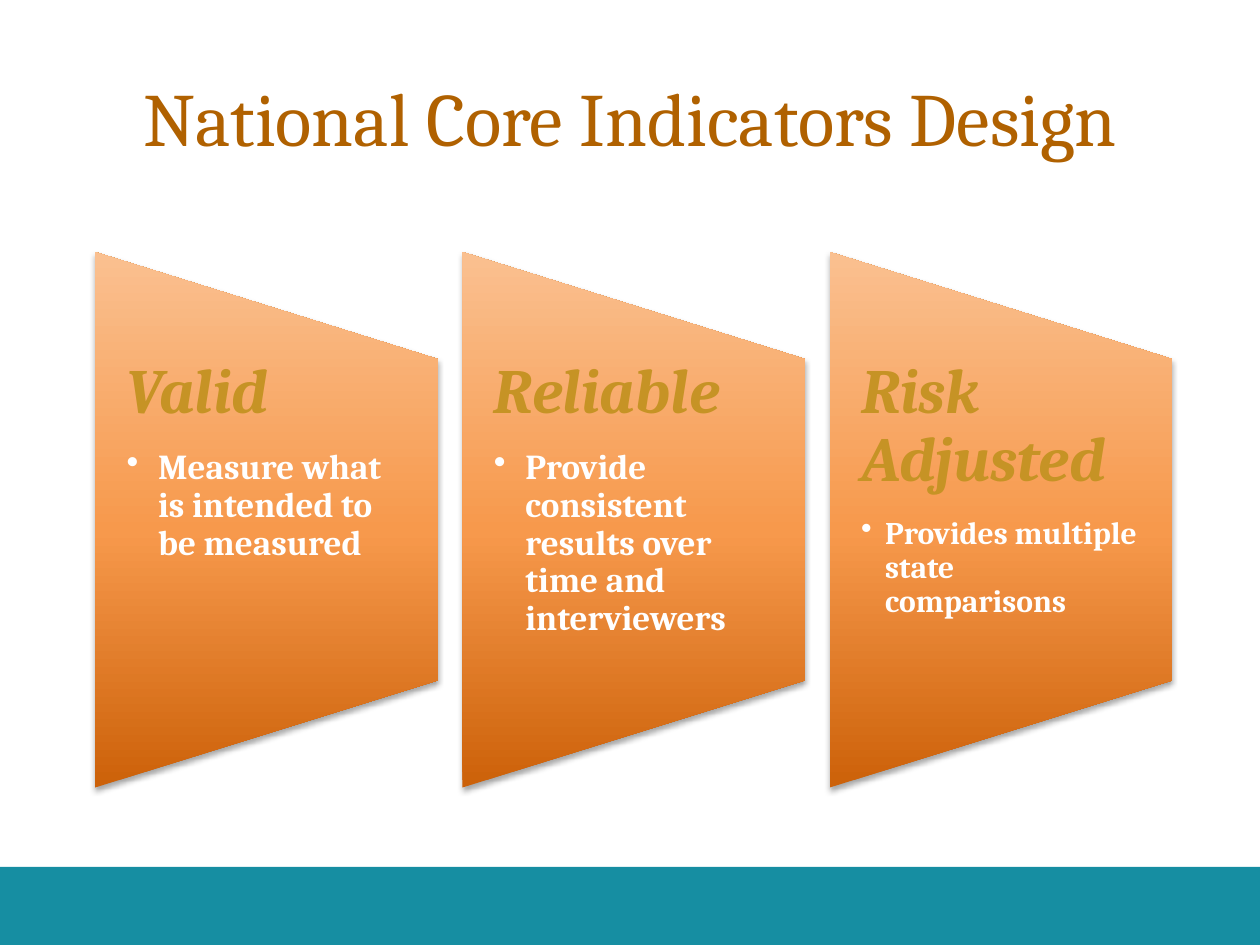
import pptx
import pptx.util
import pptx.dml.color
import pptx.enum.shapes
import pptx.enum.text
import pptx.oxml
import pptx.oxml.ns
from lxml import etree
from pptx.util import Inches, Pt

FONT = "Cambria"
COLORS = {
    "title": "B06100",
    "heading": "C69325",
    "detail": "FFFFFF",
    "footer": "168EA2",
    "panel_dark": "CC6109",
    "panel_mid": "F7994C",
    "panel_light": "FAC090",
    "shadow": "000000",
}
# Heading, detail, detail size in points, bullet indent in inches
PANELS = [
    ("Valid", "Measure what is intended to be measured", 20, 0.25),
    ("Reliable", "Provide consistent results over time and interviewers", 20, 0.25),
    ("Risk Adjusted", "Provides multiple state comparisons", 18, 0.19),
]
PANEL_LEFT, PANEL_TOP, PANEL_WIDTH, PANEL_HEIGHT = 0.755, 2, 2.72, 4.25
PANEL_PITCH = 2.915


def rgb(name):
    return pptx.dml.color.RGBColor.from_string(COLORS[name])


def format_font(font, size, color):
    font.name = FONT
    font.size = Pt(size)
    font.color.rgb = rgb(color)


def add_footer_band(slide, left, top, width, height):
    band = slide.shapes.add_shape(
        pptx.enum.shapes.MSO_SHAPE.RECTANGLE,
        Inches(left), Inches(top), Inches(width), Inches(height))
    band.shadow.inherit = False
    band.fill.solid()
    band.fill.fore_color.rgb = rgb("footer")
    band.line.fill.background()


def fill_title(title, left, top, width, height):
    title.left, title.top = Inches(left), Inches(top)
    title.width, title.height = Inches(width), Inches(height)
    title.text_frame.text = "National Core Indicators Design"
    title.text_frame.vertical_anchor = pptx.enum.text.MSO_ANCHOR.MIDDLE
    paragraph = title.text_frame.paragraphs[0]
    paragraph.alignment = pptx.enum.text.PP_ALIGN.CENTER
    format_font(paragraph.runs[0].font, 43, "title")


def style_panel(shape):
    """Give the shape an upright gradient and a soft shadow, unaffected by rotation."""
    namespace = pptx.oxml.ns.nsdecls("a")
    stops = "".join(
        f'<a:gs pos="{position * 1000}"><a:srgbClr val="{COLORS[name]}"/></a:gs>'
        for position, name in [(0, "panel_dark"), (48, "panel_mid"), (100, "panel_light")])
    gradient = pptx.oxml.parse_xml(
        f'<a:gradFill {namespace} rotWithShape="0"><a:gsLst>{stops}</a:gsLst>'
        '<a:lin ang="16200000" scaled="0"/></a:gradFill>')
    effects = pptx.oxml.parse_xml(
        f'<a:effectLst {namespace}><a:outerShdw blurRad="{Pt(3.1)}" dist="{Pt(1.8)}" '
        f'dir="5400000" rotWithShape="0"><a:srgbClr val="{COLORS["shadow"]}">'
        '<a:alpha val="35000"/></a:srgbClr></a:outerShdw></a:effectLst>')
    shape.line.fill.background()
    properties = shape._element.spPr
    properties.find(pptx.oxml.ns.qn("a:prstGeom")).addnext(gradient)
    properties.append(effects)


def add_bullet(paragraph, indent):
    properties = paragraph._p.get_or_add_pPr()
    properties.set("marL", str(Inches(indent)))
    properties.set("indent", str(-Inches(indent)))
    etree.SubElement(properties, pptx.oxml.ns.qn("a:buChar"), char="•")


def add_panel(slide, left, top, width, height, heading, detail, detail_size, indent):
    # The preset lies on its side, so its box is turned about the panel's centre.
    shape = slide.shapes.add_shape(
        pptx.enum.shapes.MSO_SHAPE.FLOWCHART_MANUAL_OPERATION,
        Inches(left + (width - height) / 2), Inches(top + (height - width) / 2),
        Inches(height), Inches(width))
    shape.rotation = 270
    style_panel(shape)

    box = slide.shapes.add_textbox(
        Inches(left), Inches(top + height / 5), Inches(width), Inches(height * 3 / 5))
    frame = box.text_frame
    frame.word_wrap = True
    frame.margin_left = frame.margin_right = Inches(0.25)
    frame.margin_top = frame.margin_bottom = 0

    frame.text = heading
    heading_paragraph = frame.paragraphs[0]
    detail_paragraph = frame.add_paragraph()
    detail_paragraph.text = detail
    detail_paragraph.level = 1
    add_bullet(detail_paragraph, indent)
    for paragraph, size, color, gap in [
            (heading_paragraph, 36, "heading", 0.35),
            (detail_paragraph, detail_size, "detail", 0.15)]:
        paragraph.line_spacing = 0.9
        paragraph.space_after = Pt(size * gap)
        font = paragraph.runs[0].font
        format_font(font, size, color)
        font.bold = True
        font.italic = paragraph is heading_paragraph
    # The bullet takes its colour from the run that follows it.


def main():
    presentation = pptx.Presentation()
    presentation.slide_width, presentation.slide_height = Inches(10), Inches(7.5)
    slide = presentation.slides.add_slide(presentation.slide_layouts[5])
    add_footer_band(slide, 0, 6.88, 10, 0.62)
    fill_title(slide.shapes.title, 0.5, 0.3, 9, 1.25)
    for index, panel in enumerate(PANELS):
        add_panel(slide, PANEL_LEFT + index * PANEL_PITCH, PANEL_TOP,
                  PANEL_WIDTH, PANEL_HEIGHT, *panel)
    presentation.save("out.pptx")


if __name__ == "__main__":
    main()
